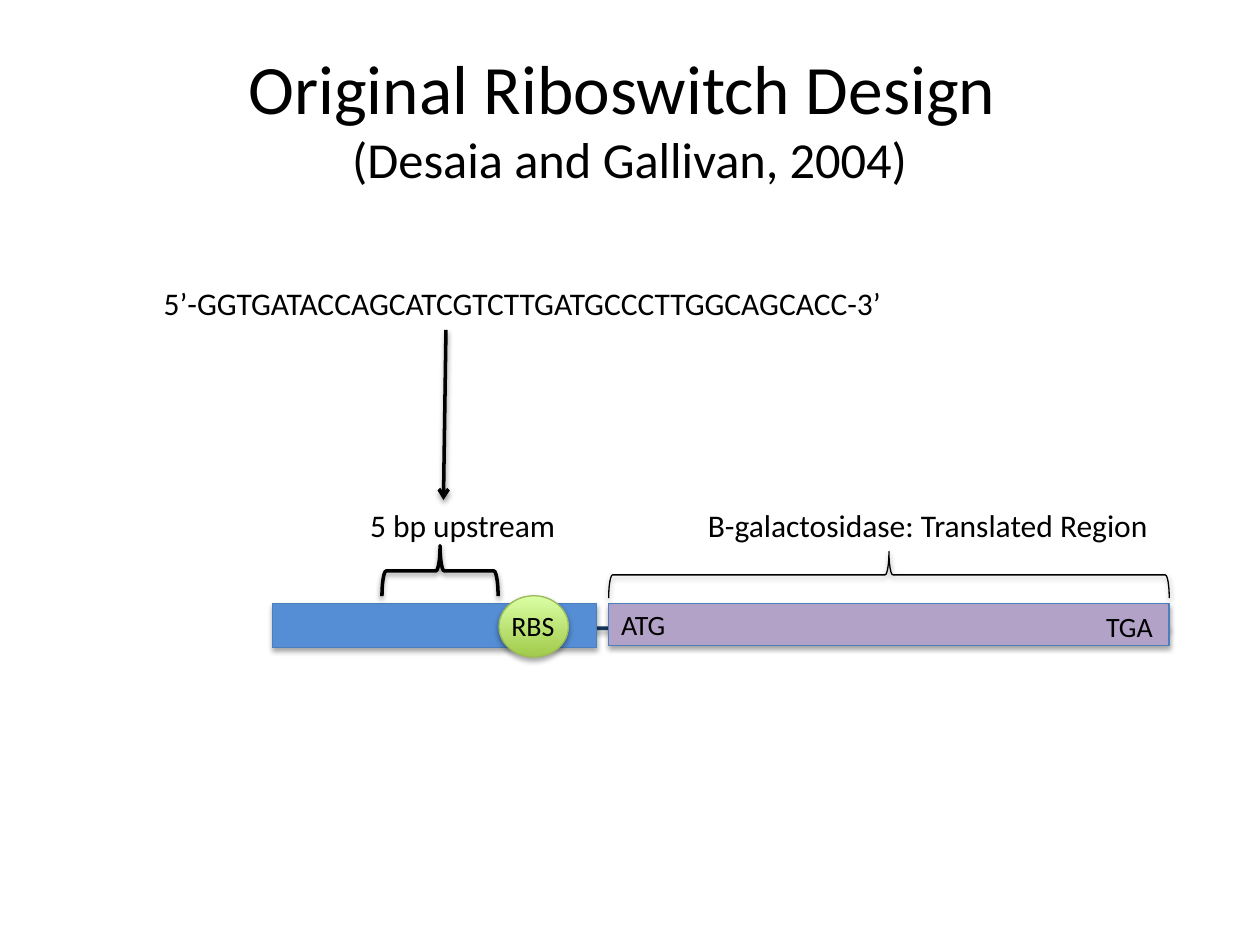
"""Builds the riboswitch design slide."""
from dataclasses import dataclass

from lxml import etree
from pptx import Presentation
from pptx.dml.color import RGBColor
from pptx.enum.shapes import MSO_CONNECTOR, MSO_SHAPE
from pptx.enum.text import MSO_ANCHOR, MSO_AUTO_SIZE, PP_ALIGN
from pptx.oxml.ns import qn
from pptx.util import Cm, Pt

RECTANGLE, OVAL, BRACE = MSO_SHAPE.RECTANGLE, MSO_SHAPE.OVAL, MSO_SHAPE.LEFT_BRACE
STRAIGHT = MSO_CONNECTOR.STRAIGHT
MIDDLE, TOP = MSO_ANCHOR.MIDDLE, MSO_ANCHOR.TOP
FIT_SHAPE, NO_FIT = MSO_AUTO_SIZE.SHAPE_TO_FIT_TEXT, MSO_AUTO_SIZE.NONE
LEFT, CENTER = PP_ALIGN.LEFT, PP_ALIGN.CENTER
BLANK_LAYOUT = 6


@dataclass(frozen=True)
class Theme:
    font: str = "Calibri"
    black: str = "000000"
    strand: str = "17375E"
    upstream: str = "558ED5"
    gene: str = "B3A2C7"
    region_edge: str = "4B7EBC"
    site: tuple = ("A0CA4A", "DAFFA5")
    site_edge: str = "9BBB59"
    title: float = 39.6
    citation: float = 28.8
    label: float = 18
    codon: float = 16
    thin: float = 0.75
    thick: float = 2
    solid_shadow: tuple = (1.8, 35)
    line_shadow: tuple = (1.6, 38)


class SlideBuilder:
    def __init__(self, slide, theme):
        self.shapes = slide.shapes
        self.theme = theme

    def shadow(self, element, distance, opacity):
        properties = element._element.spPr
        for old in properties.findall(qn("a:effectLst")):
            properties.remove(old)
        effects = etree.SubElement(properties, qn("a:effectLst"))
        outer = etree.SubElement(effects, qn("a:outerShdw"), blurRad=str(Pt(3.1)),
                                 dist=str(Pt(distance)), dir="5400000", rotWithShape="0")
        color = etree.SubElement(outer, qn("a:srgbClr"), val=self.theme.black)
        etree.SubElement(color, qn("a:alpha"), val=str(opacity * 1000))

    def outline(self, element, color, width):
        element.line.color.rgb = RGBColor.from_string(color)
        element.line.width = Pt(width)

    def region(self, preset, box, fill, edge):
        region = self.shapes.add_shape(preset, *map(Cm, box))
        if isinstance(fill, tuple):
            region.fill.gradient()
            region.fill.gradient_angle = 90
            for position, (stop, color) in enumerate(zip(region.fill.gradient_stops, fill)):
                stop.position = position
                stop.color.rgb = RGBColor.from_string(color)
        else:
            region.fill.solid()
            region.fill.fore_color.rgb = RGBColor.from_string(fill)
        self.outline(region, edge, self.theme.thin)
        self.shadow(region, *self.theme.solid_shadow)

    def brace(self, box, width):
        brace = self.shapes.add_shape(BRACE, *map(Cm, box))
        brace.rotation = 90
        brace.fill.background()
        self.outline(brace, self.theme.black, width)
        self.shadow(brace, *self.theme.line_shadow)

    def line(self, start, end, color, arrow=False):
        line = self.shapes.add_connector(STRAIGHT, *map(Cm, start + end))
        self.outline(line, color, self.theme.thick)
        if arrow:
            etree.SubElement(line.line._get_or_add_ln(), qn("a:tailEnd"), type="arrow")
        self.shadow(line, *self.theme.line_shadow)

    def text(self, box, *lines, align=LEFT, **changes):
        frame = self.shapes.add_textbox(*map(Cm, box)).text_frame
        frame_format = {"word_wrap": True, "auto_size": FIT_SHAPE, "vertical_anchor": TOP}
        for attribute, value in (frame_format | changes).items():
            setattr(frame, attribute, value)
        paragraph = frame.paragraphs[0]
        paragraph.alignment = align
        for index, (words, size) in enumerate(lines):
            if index:
                paragraph.add_line_break()
            run = paragraph.add_run()
            run.text = words
            for attribute, value in {"name": self.theme.font, "size": Pt(size)}.items():
                setattr(run.font, attribute, value)
            run.font.color.rgb = RGBColor.from_string(self.theme.black)


def main():
    deck = Presentation()
    deck.slide_width, deck.slide_height = Cm(25.4), Cm(19.05)
    theme = Theme()
    builder = SlideBuilder(deck.slides.add_slide(deck.slide_layouts[BLANK_LAYOUT]), theme)
    region_top, label_top, label_height, codon_height = 12.17, 10.08, 1.02, 0.94
    gene_left, gene_length = 12.27, 11.3

    builder.line((7.95, 12.67), (gene_left + gene_length, 12.65), theme.strand)
    builder.region(RECTANGLE, (5.49, region_top, 6.53, 0.89), theme.upstream, theme.region_edge)
    builder.region(OVAL, (10.06, 12.01, 1.4, 1.24), theme.site, theme.site_edge)
    builder.text((1.27, 0.76, 22.86, 3.18),
                 ("Original Riboswitch Design ", theme.title),
                 ("(Desaia and Gallivan, 2004)", theme.citation),
                 align=CENTER, vertical_anchor=MIDDLE, auto_size=NO_FIT)
    builder.text((3.05, 5.61, 16.56, label_height),
                 ("5’-GGTGATACCAGCATCGTCTTGATGCCCTTGGCAGCACC-3’", theme.label))
    builder.region(RECTANGLE, (gene_left, region_top, gene_length, 0.84),
                   theme.gene, theme.region_edge)
    for codon, left, top, width in (("ATG", gene_left, 12.12, 1.65),
                                    ("TGA", 22.05, region_top, 1.85),
                                    ("RBS", 10.06, 12.14, 1.68)):
        builder.text((left, top, width, codon_height), (codon, theme.codon))
    builder.brace((17.45, 5.94, 0.94, gene_length), theme.thin)
    builder.text((14.02, label_top, 10.54, label_height),
                 ("B-galactosidase: Translated Region", theme.label))
    builder.brace((8.36, 10.34, 1.02, 2.34), theme.thick)
    builder.text((7.21, label_top, 4.29, label_height),
                 ("5 bp upstream", theme.label), word_wrap=False)
    builder.line((8.99, 6.65), (8.94, label_top), theme.black, arrow=True)
    deck.save("out.pptx")


if __name__ == "__main__":
    main()
